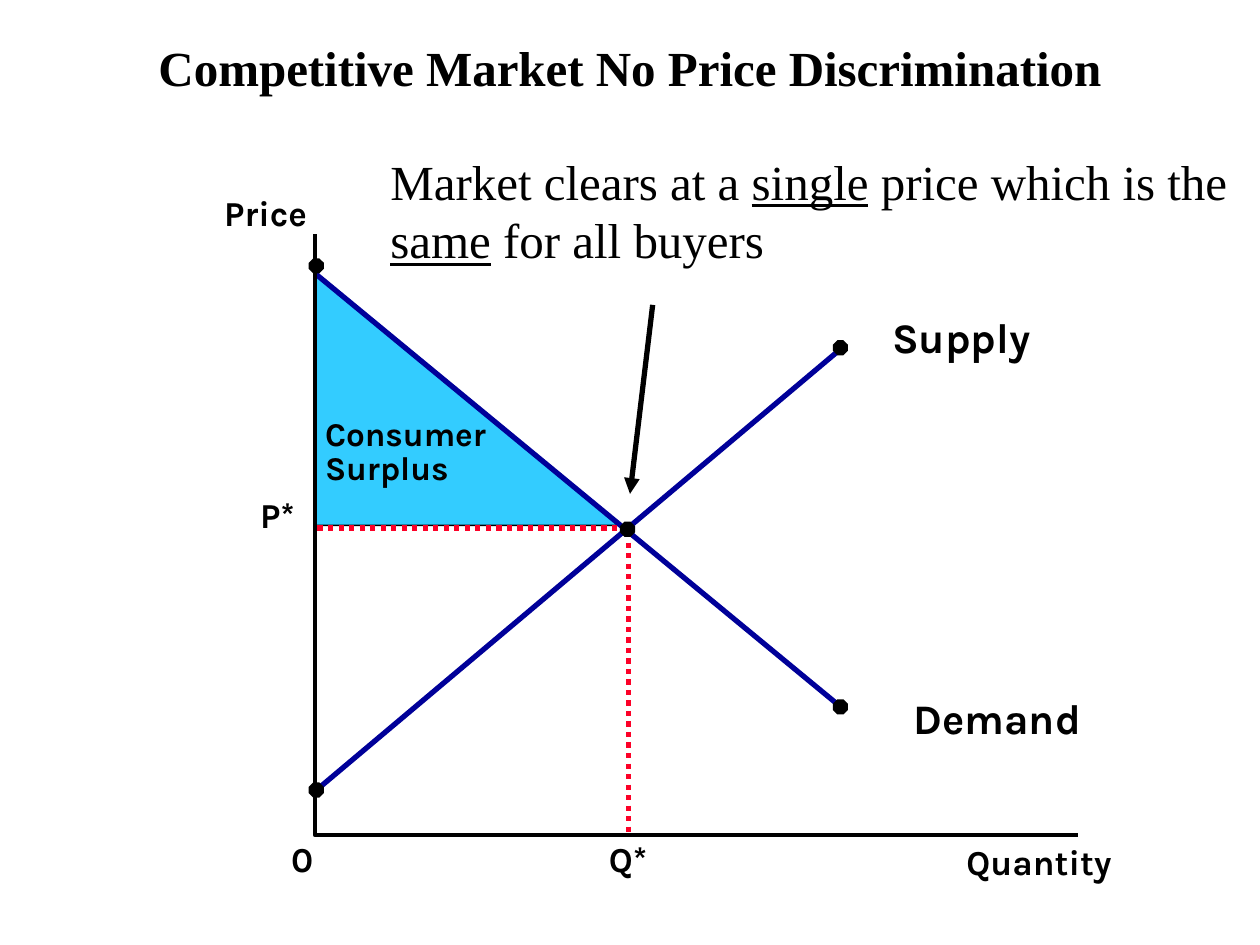
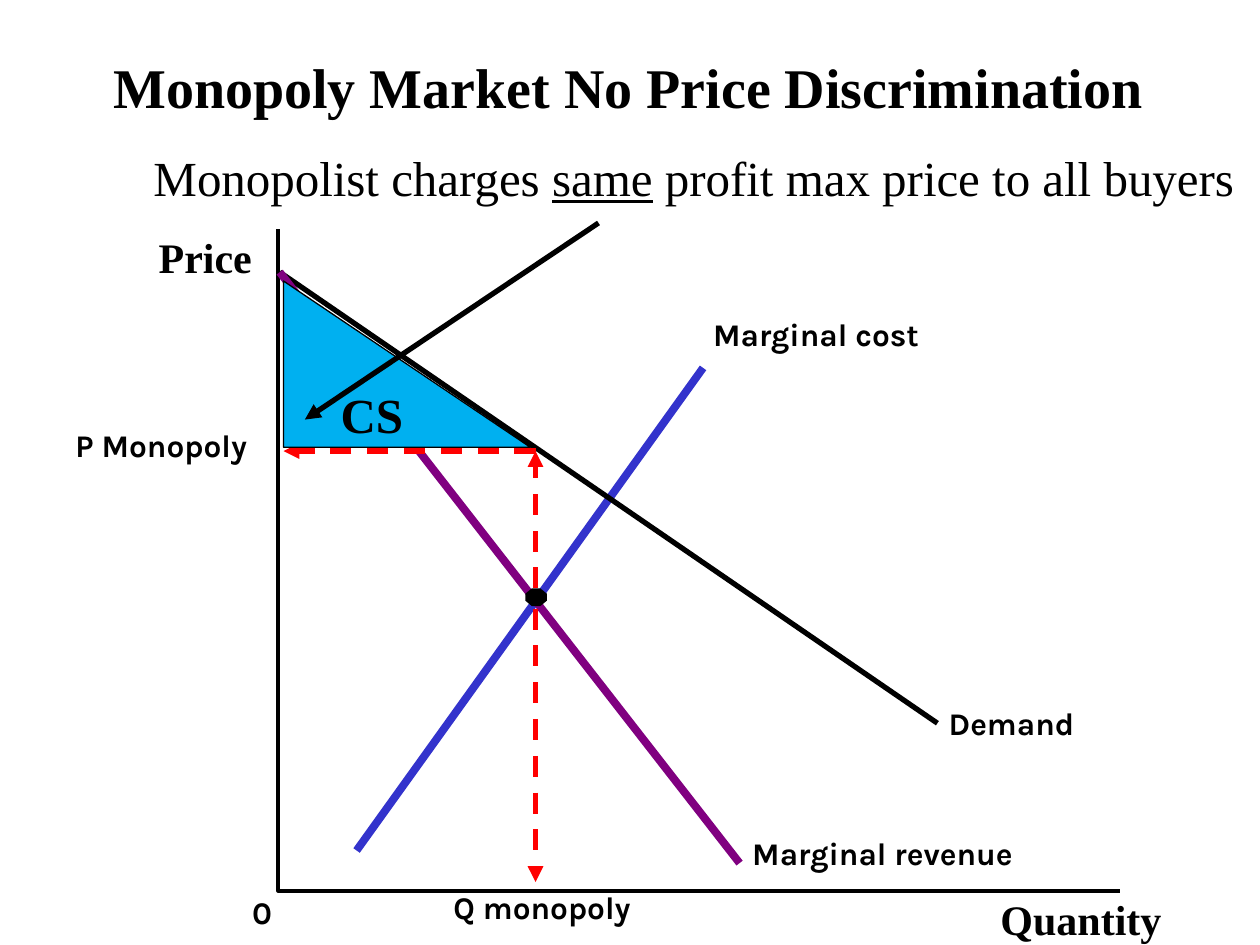
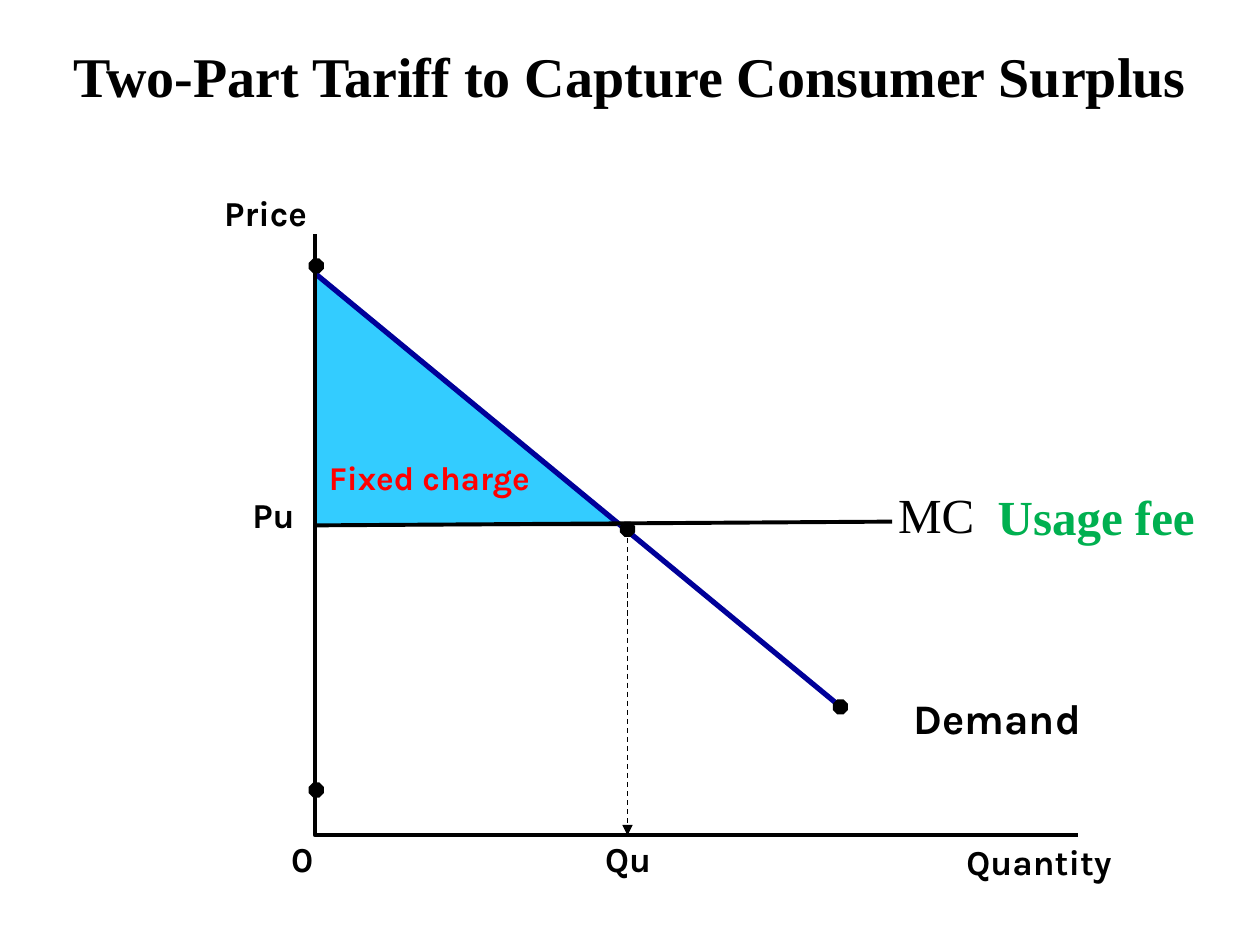
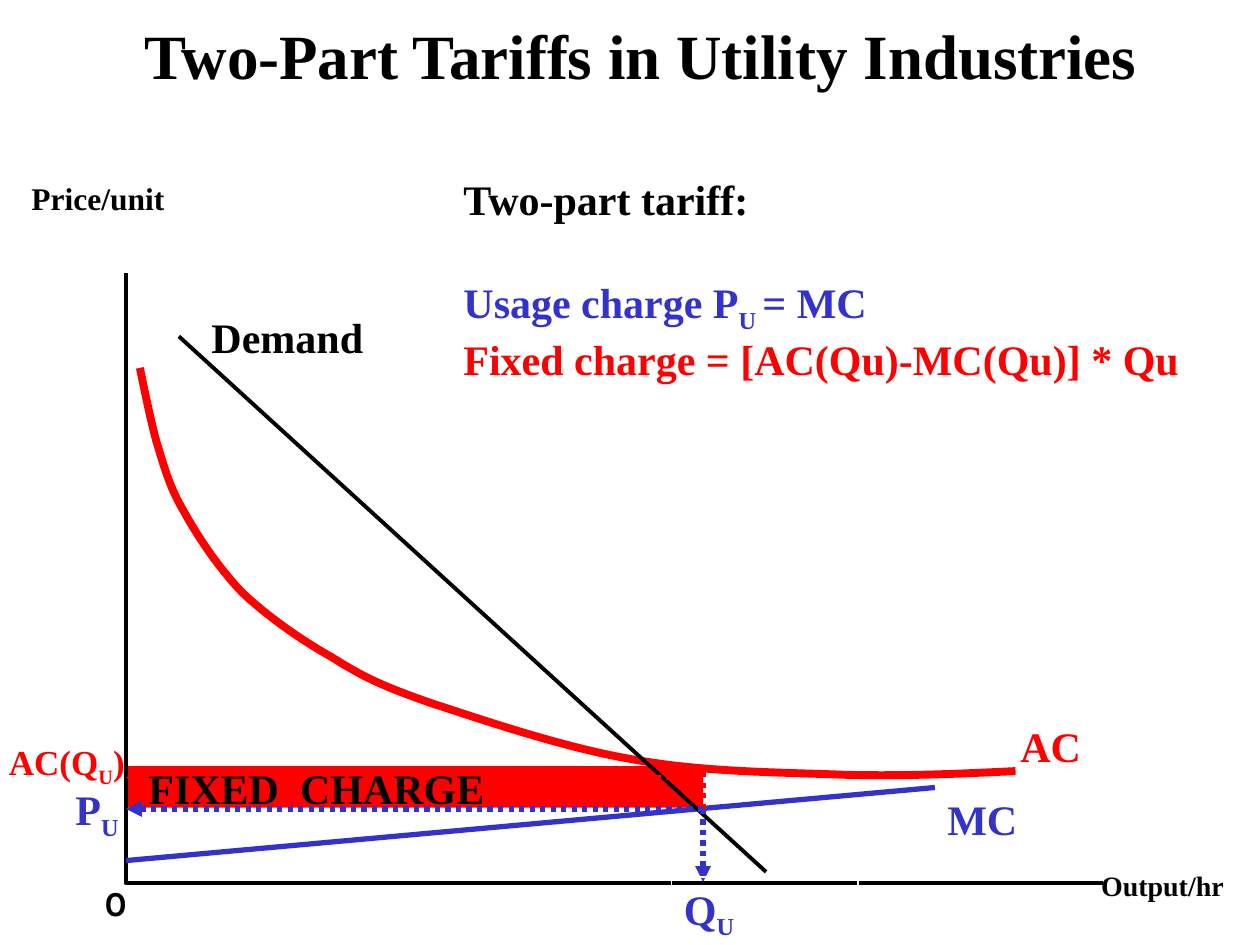
from dataclasses import dataclass, replace
from typing import Optional

from lxml import etree
from pptx import Presentation
from pptx import util as u
from pptx.dml.color import RGBColor
from pptx.enum import dml, shapes, text
from pptx.oxml.ns import qn

BLACK = RGBColor(0x00, 0x00, 0x00)
WHITE = RGBColor(0xFF, 0xFF, 0xFF)
RED = RGBColor(0xFF, 0x00, 0x00)
CRIMSON = RGBColor(0xFC, 0x01, 0x28)
GREEN = RGBColor(0x00, 0xB0, 0x50)
NAVY = RGBColor(0x00, 0x00, 0x99)
BLUE = RGBColor(0x33, 0x33, 0xCC)
PURPLE = RGBColor(0x80, 0x00, 0x80)
SKY = RGBColor(0x33, 0xCC, 0xFF)
AZURE = RGBColor(0x00, 0xB0, 0xF0)

SERIF = "Times New Roman"
SANS = "Karla"
FLUSH = (0, 0, 0, 0)
PADDED = (0.1, 0.05, 0.1, 0.05)
LEFT, CENTER, RIGHT = text.PP_ALIGN.LEFT, text.PP_ALIGN.CENTER, text.PP_ALIGN.RIGHT
DASH, DOT = dml.MSO_LINE.DASH, dml.MSO_LINE.ROUND_DOT
TITLE_ONLY = 5

Point = tuple[float, float]


@dataclass(frozen=True)
class Span:
    words: str
    underline: bool = False
    subscript: bool = False
    color: Optional[RGBColor] = None


@dataclass(frozen=True)
class Style:
    font: str = SANS
    size: float = 20
    color: RGBColor = BLACK
    bold: bool = True
    align: text.PP_ALIGN = LEFT
    spacing: float = 1.0
    insets: tuple[float, float, float, float] = FLUSH
    wrap: bool = False


@dataclass(frozen=True)
class Label:
    left: float
    top: float
    width: float
    height: float
    lines: tuple
    style: Style


@dataclass(frozen=True)
class Stroke:
    points: tuple[Point, ...]
    color: RGBColor = BLACK
    width: float = 3
    dash: Optional[dml.MSO_LINE] = None
    arrow: bool = False


@dataclass(frozen=True)
class Dot:
    left: float
    top: float
    width: float = 0.12
    height: float = 0.12


AXIS_LABEL = Style()
TIGHT_LABEL = Style(size=19, spacing=0.85)
CURVE_LABEL = Style(size=24)
SMALL_LABEL = Style(size=18)
SERIF_LABEL = Style(SERIF, 24)
PADDED_SERIF = replace(SERIF_LABEL, insets=PADDED, wrap=True)
NOTE = Style(SERIF, 28, bold=False, insets=PADDED)

DEMAND_DOT = Dot(6.61, 5.55)
SUPPLY_DOT = Dot(6.61, 2.7)
MARKET_DOTS = (Dot(2.45, 6.21), Dot(4.92, 4.14), DEMAND_DOT, Dot(2.45, 2.05))


def inches(*lengths: float) -> list[u.Length]:
    return [u.Inches(length) for length in lengths]


def fill_frame(frame, lines: tuple, style: Style) -> None:
    """Write lines, each a string or a tuple of spans, in one style."""
    frame.word_wrap = style.wrap
    sides = ("left", "top", "right", "bottom")
    for side, inset in zip(sides, inches(*style.insets)):
        setattr(frame, f"margin_{side}", inset)
    for number, line in enumerate(lines):
        para = frame.add_paragraph() if number else frame.paragraphs[0]
        para.alignment = style.align
        para.line_spacing = style.spacing
        for span in (Span(line),) if isinstance(line, str) else line:
            run = para.add_run()
            run.text = span.words
            run.font.color.rgb = span.color or style.color
            formats = {"name": style.font, "size": u.Pt(style.size),
                       "bold": style.bold, "underline": span.underline}
            for name, value in formats.items():
                setattr(run.font, name, value)
            if span.subscript:
                run._r.get_or_add_rPr().set("baseline", "-25000")


def add_label(page, label: Label):
    box = page.shapes.add_textbox(*inches(label.left, label.top, label.width, label.height))
    box.text_frame.auto_size = text.MSO_AUTO_SIZE.SHAPE_TO_FIT_TEXT
    fill_frame(box.text_frame, label.lines, label.style)
    return box


def add_area(page, preset, place: tuple, fill: Optional[RGBColor] = None,
             outline: Optional[RGBColor] = None, width: float = 1):
    area = page.shapes.add_shape(preset, *inches(*place))
    area.shadow.inherit = False
    if fill is None:
        area.fill.background()
    else:
        area.fill.solid()
        area.fill.fore_color.rgb = fill
    if outline is None:
        area.line.fill.background()
    else:
        area.line.color.rgb = outline
        area.line.width = u.Pt(width)
    area.text_frame.vertical_anchor = text.MSO_ANCHOR.TOP
    return area


def add_outline(page, points: tuple[Point, ...], close: bool):
    start, *rest = [tuple(inches(*point)) for point in points]
    builder = page.shapes.build_freeform(*start)
    builder.add_line_segments(rest, close=close)
    outline = builder.convert_to_shape()
    outline.shadow.inherit = False
    return outline


def add_stroke(page, stroke: Stroke):
    """Two points make a connector, more make an open outline."""
    if len(stroke.points) == 2:
        start, end = stroke.points
        line = page.shapes.add_connector(shapes.MSO_CONNECTOR.STRAIGHT, *inches(*start, *end))
    else:
        line = add_outline(page, stroke.points, close=False)
        line.fill.background()
    line.line.color.rgb = stroke.color
    line.line.width = u.Pt(stroke.width)
    if stroke.dash is not None:
        line.line.dash_style = stroke.dash
    properties = line._element.spPr
    if stroke.arrow:
        etree.SubElement(properties.find(qn("a:ln")), qn("a:tailEnd"), type="triangle")
    if len(stroke.points) == 2:
        etree.SubElement(properties, qn("a:effectLst"))
    return line


def add_curve(page, stroke: Stroke) -> None:
    """Read the points after the first in threes, as Bezier segments."""
    curve = add_stroke(page, stroke)
    segments = list(curve._element.iter(qn("a:lnTo")))
    for first in range(0, len(segments), 3):
        bezier = etree.Element(qn("a:cubicBezTo"))
        segments[first].addprevious(bezier)
        for segment in segments[first:first + 3]:
            bezier.append(segment[0])
            segment.getparent().remove(segment)


def add_dot(page, dot: Dot) -> None:
    """An octagon that fills the dot's box."""
    cuts = ((0.3, 0), (0.7, 0), (1, 0.3), (1, 0.7), (0.7, 1), (0.3, 1), (0, 0.7), (0, 0.3))
    points = tuple((dot.left + x * dot.width, dot.top + y * dot.height) for x, y in cuts)
    mark = add_outline(page, points, close=True)
    mark.fill.solid()
    mark.fill.fore_color.rgb = BLACK
    mark.line.fill.background()


def draw_all(page, draw, items) -> None:
    for item in items:
        draw(page, item)


def add_page(deck, title: str, size: float, place: tuple, bottom: float = 0.05):
    page = deck.slides.add_slide(deck.slide_layouts[TITLE_ONLY])
    box = page.shapes.title
    for name, value in zip(("left", "top", "width", "height"), inches(*place)):
        setattr(box, name, value)
    frame = box.text_frame
    frame.auto_size = text.MSO_AUTO_SIZE.NONE
    frame.vertical_anchor = text.MSO_ANCHOR.MIDDLE
    style = Style(SERIF, size, align=CENTER, insets=(0.1, 0.05, 0.1, bottom), wrap=True)
    fill_frame(frame, (title,), style)
    return page


def axes(left: float, top: float, right: float, bottom: float) -> Stroke:
    return Stroke(((left, top), (left, bottom), (right, bottom)), width=2.25)


def draw_market(page, price: str, quantity: str) -> None:
    """Surplus triangle, axes, demand line and the labels around them."""
    add_area(page, shapes.MSO_SHAPE.RIGHT_TRIANGLE, (2.5, 2.17, 2.42, 2), SKY, BLACK)
    wrapped = replace(AXIS_LABEL, wrap=True)
    draw_all(page, add_label, (
        Label(1.78, 1.52, 1.06, 0.34, ("Price",), wrapped),
        Label(1.98, 3.92, 0.36, 0.33, (price,), replace(AXIS_LABEL, align=RIGHT)),
        Label(2.31, 6.65, 0.18, 0.33, ("0",), AXIS_LABEL),
        Label(7.67, 6.67, 2.1, 0.34, ("Quantity",), wrapped),
        Label(4.79, 6.7, 0.39, 0.28, (quantity,),
              replace(AXIS_LABEL, align=CENTER, spacing=0.85)),
        Label(7.25, 5.5, 1.5, 0.4, ("Demand",), CURVE_LABEL),
    ))
    draw_all(page, add_stroke, (
        Stroke(((2.5, 2.17), (6.66, 5.6)), NAVY),
        axes(2.5, 1.86, 8.56, 6.63),
    ))


def build_competitive_market(deck) -> None:
    page = add_page(deck, "Competitive Market No Price Discrimination", 28,
                    (0, 0.23, 10, 1.25), bottom=0.7)
    draw_market(page, "P*", "Q*")
    draw_all(page, add_stroke, (
        Stroke(((2.52, 4.19), (4.99, 4.19), (4.99, 6.63)), CRIMSON, dash=DOT),
        Stroke(((2.5, 6.28), (6.66, 2.78)), NAVY),
    ))
    draw_all(page, add_dot, (*MARKET_DOTS, SUPPLY_DOT))
    draw_all(page, add_label, (
        Label(7.08, 2.47, 1.27, 0.4, ("Supply",), CURVE_LABEL),
        Label(2.58, 3.33, 1.35, 0.54, ("Consumer", "Surplus"), TIGHT_LABEL),
        Label(3, 1.15, 7.01, 1.04, (
            (Span("Market clears at a "), Span("single", underline=True),
             Span(" price which is the")),
            (Span("same", underline=True), Span(" for all buyers")),
        ), NOTE),
    ))
    add_stroke(page, Stroke(((5.18, 2.42), (5, 3.92)), arrow=True))


def build_monopoly_market(deck) -> None:
    page = add_page(deck, "Monopoly Market No Price Discrimination", 32, (-0.01, 0.06, 10, 1.25))
    padded = replace(SMALL_LABEL, insets=PADDED)
    draw_all(page, add_label, (
        Label(7.94, 7.09, 1.29, 0.4, ("Quantity",), SERIF_LABEL),
        Label(2, 7.09, 0.16, 0.3, ("0",), SMALL_LABEL),
        Label(1.26, 1.84, 0.74, 0.71, ("Price",), SERIF_LABEL),
        Label(7.53, 5.59, 1.13, 0.3, ("Demand",), SMALL_LABEL),
        Label(5.66, 2.5, 1.78, 0.3, ("Marginal cost",), SMALL_LABEL),
        Label(5.97, 6.62, 2.28, 0.3, ("Marginal revenue",), SMALL_LABEL),
        Label(0.5, 3.33, 1.68, 0.81, ("P Monopoly",), padded),
        Label(3.5, 7, 1.79, 0.4, ("Q monopoly",), padded),
    ))
    choice = (4.25, 3.58)
    guides = (((4.25, 4.83), (4.25, 7)), ((4.25, 4.67), choice), (choice, (2.25, 3.58)))
    draw_all(page, add_stroke, (
        axes(2.21, 1.82, 8.89, 7.07),
        Stroke(((5.58, 2.92), (2.83, 6.75)), BLUE, 4.5),
        Stroke(((2.22, 2.16), (7.44, 5.74))),
        Stroke(((2.22, 2.16), (5.87, 6.85)), PURPLE, 4.5),
        *(Stroke(points, RED, dash=DASH, arrow=True) for points in guides),
    ))
    add_dot(page, Dot(4.17, 4.67, 0.17, 0.14))
    surplus = add_area(page, shapes.MSO_SHAPE.RIGHT_TRIANGLE, (2.25, 2.23, 1.96, 1.32),
                       AZURE, BLACK, 0.75)
    fill_frame(surplus.text_frame, ("CS",),
               Style(SERIF, 28, insets=(0.29, 0.05, 0.1, 0.05), wrap=True))
    add_label(page, Label(1.12, 1.12, 8.87, 0.57, (
        (Span("Monopolist charges "), Span("same", underline=True),
         Span(" profit max price to all buyers")),
    ), NOTE))
    add_stroke(page, Stroke(((4.75, 1.77), (2.42, 3.33)), arrow=True))


def build_surplus_capture(deck) -> None:
    page = add_page(deck, "Two-Part Tariff to Capture Consumer Surplus", 32,
                    (0, 0.23, 10, 1.25), bottom=0.56)
    draw_market(page, "Pu", "Qu")
    draw_all(page, add_dot, MARKET_DOTS)
    draw_all(page, add_stroke, (
        Stroke(((2.5, 4.17), (7.08, 4.14)), width=2.25),
        Stroke(((4.98, 4.2), (4.98, 6.63)), width=0.75, dash=DASH, arrow=True),
    ))
    draw_all(page, add_label, (
        Label(2.61, 3.68, 1.71, 0.27, ("Fixed charge",), replace(TIGHT_LABEL, color=RED)),
        Label(7.82, 3.81, 1.78, 0.57, ("Usage fee",), replace(NOTE, color=GREEN, bold=True)),
        Label(7.03, 3.8, 0.81, 0.57, ("MC",), NOTE),
    ))


def build_utility_tariff(deck) -> None:
    page = add_page(deck, "Two-Part Tariffs in Utility Industries", 36, (0.17, 0, 9.83, 0.86))
    rectangle = shapes.MSO_SHAPE.RECTANGLE
    add_area(page, rectangle, (1, 6.08, 4.58, 0.33), RED)
    add_stroke(page, axes(1, 2.17, 8.75, 7.01))
    add_curve(page, Stroke((
        (1.11, 2.92),
        (1.15, 3.11), (1.19, 3.31), (1.24, 3.5),
        (1.3, 3.69), (1.34, 3.86), (1.46, 4.06),
        (1.57, 4.26), (1.73, 4.5), (1.92, 4.7),
        (2.12, 4.89), (2.39, 5.08), (2.64, 5.22),
        (2.88, 5.37), (3.02, 5.44), (3.42, 5.58),
        (3.82, 5.71), (4.49, 5.94), (5.04, 6.03),
        (5.59, 6.13), (6.22, 6.13), (6.72, 6.15),
        (7.23, 6.16), (7.64, 6.14), (8.06, 6.12),
    ), RED, 4.5))

    output = (5.58, 6.42)
    draw_all(page, add_stroke, (
        Stroke(((1, 6.83), (7.42, 6.25)), BLUE),
        Stroke(((1.42, 2.67), (6.08, 6.92)), width=2.25),
        Stroke((output, (5.58, 7)), BLUE, dash=DOT, arrow=True),
    ))
    blue = replace(PADDED_SERIF, color=BLUE)
    small_u = Span("U", subscript=True)
    quantity = add_area(page, rectangle, (5.33, 6.96, 1.48, 0.51), outline=WHITE, width=0.75)
    fill_frame(quantity.text_frame, ((Span("Q"), small_u),), blue)
    draw_all(page, add_stroke, (
        Stroke((output, (5.58, 6.08)), RED, dash=DOT),
        Stroke(((5.58, 6.17), (1, 6.17)), RED, dash=DOT, arrow=True),
    ))

    draw_all(page, add_label, (
        Label(8.67, 6.83, 1.06, 0.34, ("Output/hr",),
              Style(SERIF, 16, insets=(0.07, 0.06, 0, 0))),
        Label(0.25, 1.42, 1.06, 0.93, ("Price/unit",), Style(SERIF, 18)),
        Label(0.83, 7, 0.18, 0.34, ("0",), AXIS_LABEL),
        Label(7.42, 6.25, 2.17, 0.5, ("MC",), blue),
        Label(1.58, 2.42, 1.41, 0.83, ("Demand",), replace(PADDED_SERIF, wrap=False)),
        Label(8, 5.67, 2.17, 0.5, ("AC",), replace(PADDED_SERIF, color=RED)),
        Label(1.08, 6, 4.33, 0.5, ("FIXED  CHARGE",), PADDED_SERIF),
        Label(0.5, 6.17, 0.68, 0.5, ((Span("P"), small_u),), blue),
        Label(-0.17, 5.83, 1.27, 0.44, ((Span("AC(Q"), small_u, Span(")")),),
              Style(SERIF, 20, RED, insets=(0.24, 0.05, 0.1, 0.05))),
    ))
    tariff = add_label(page, Label(3.58, 1.33, 7.17, 3.67, (
        "Two-part tariff:",
        (Span("Usage charge P", color=BLUE), Span("U ", subscript=True, color=BLUE),
         Span("= MC", color=BLUE)),
        (Span("Fixed charge = [AC(Qu)-MC(Qu)] * Qu", color=RED),),
    ), PADDED_SERIF))
    tariff.text_frame.paragraphs[1].space_before = u.Pt(30)
    add_stroke(page, Stroke((output, (1, 6.42)), BLUE, dash=DOT, arrow=True))


def main() -> None:
    deck = Presentation()
    deck.slide_width, deck.slide_height = inches(10, 7.5)
    for build in (build_competitive_market, build_monopoly_market,
                  build_surplus_capture, build_utility_tariff):
        build(deck)
    deck.save("out.pptx")


if __name__ == "__main__":
    main()
